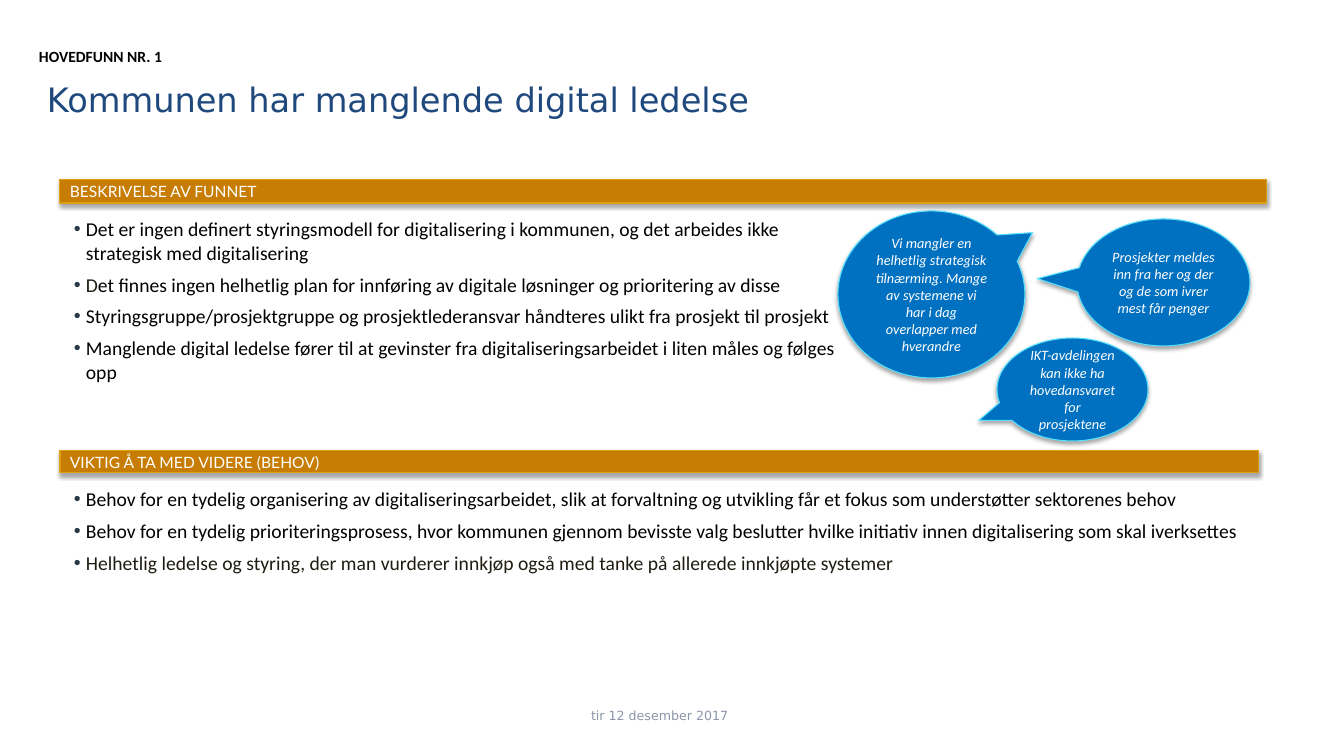
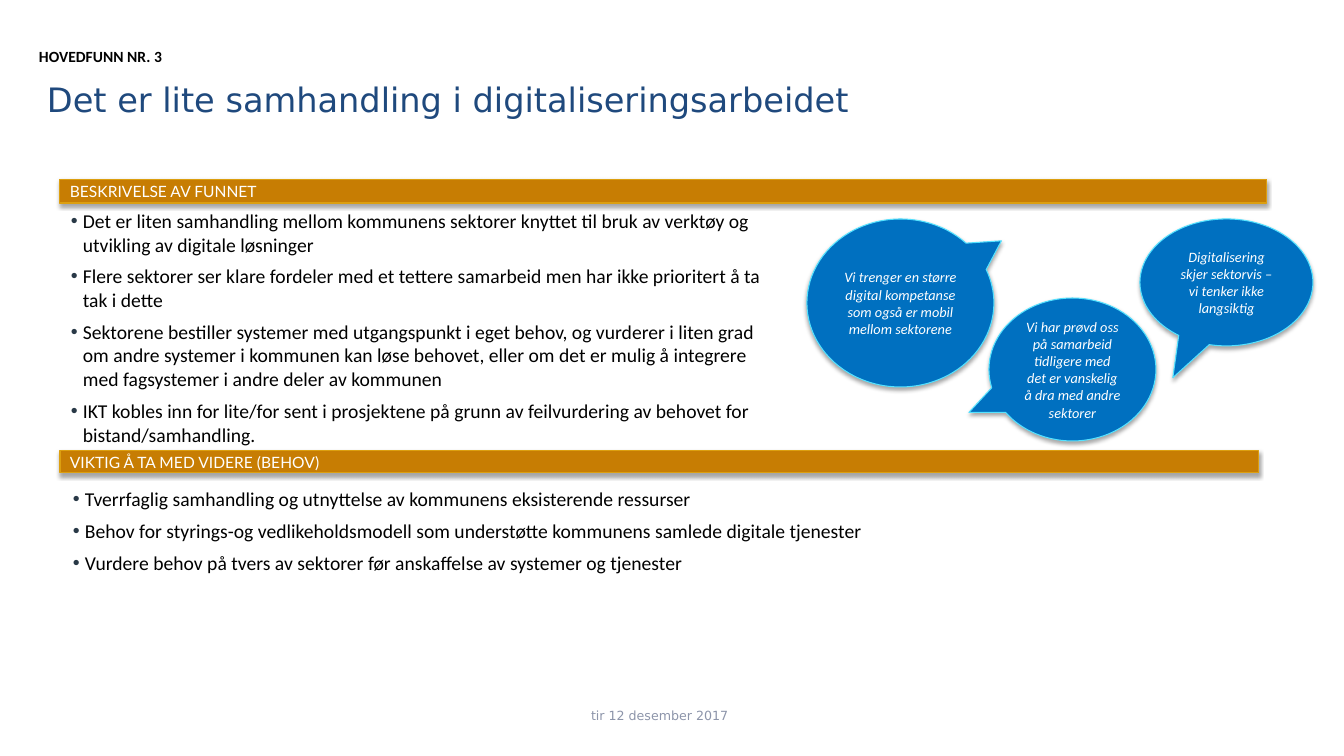
from lxml import etree
from pptx import Presentation
from pptx.dml.color import RGBColor
from pptx.enum.shapes import MSO_SHAPE
from pptx.enum.text import MSO_ANCHOR, PP_ALIGN
from pptx.oxml import parse_xml
from pptx.oxml.ns import qn
from pptx.util import Pt

RECT = MSO_SHAPE.RECTANGLE
CALLOUT = MSO_SHAPE.OVAL_CALLOUT
TOP, MIDDLE = MSO_ANCHOR.TOP, MSO_ANCHOR.MIDDLE
LEFT, CENTER = PP_ALIGN.LEFT, PP_ALIGN.CENTER
PX = 914400 / 100.8

C = {
    "title": "1F497D",
    "footer": "8D95AA",
    "band": "C77D03",
    "band_line": "DC9F10",
    "callout": "0070C0",
    "callout_line": "55E2FF",
    "bullet": "293947",
    "black": "000000",
    "ink": "1E1C11",
    "white": "FFFFFF",
}

SHADOW = (
    '<a:effectLst xmlns:a="http://schemas.openxmlformats.org/drawingml/2006/main">'
    '<a:outerShdw blurRad="40000" dist="23000" dir="5400000" rotWithShape="0">'
    '<a:srgbClr val="000000"><a:alpha val="35000"/></a:srgbClr>'
    "</a:outerShdw></a:effectLst>"
)

BANDS = [
    ((60, 179, 1207, 24), "BESKRIVELSE AV FUNNET"),
    ((60, 451, 1199, 22), "VIKTIG Å TA MED VIDERE (BEHOV)"),
]

SLIDES = [
    {
        "label": "HOVEDFUNN NR. 1",
        "title": "Kommunen har manglende digital ledelse",
        "lists": [
            ((64, 212, 788, 178), [
                [("Det er ingen definert styringsmodell for digitalisering i kommunen, og det arbeides ikke strategisk med digitalisering", "black")],
                [("D", "ink"), ("et finnes ingen helhetlig plan for innføring av digitale løsninger og prioritering av disse", "black")],
                [("Styringsgruppe/prosjektgruppe og prosjektlederansvar håndteres ulikt fra prosjekt til prosjekt", "black")],
                [("Manglende digital ledelse fører til at gevinster fra digitaliseringsarbeidet i liten måles og følges opp", "black")],
            ]),
            ((64, 482, 1185, 122), [
                [("Behov for en tydelig organisering av digitaliseringsarbeidet, slik at forvaltning og utvikling får et fokus som understøtter sektorenes behov", "black")],
                [("Behov for en tydelig prioriteringsprosess, hvor kommunen gjennom bevisste valg beslutter hvilke initiativ innen digitalisering som skal iverksettes", "black")],
                [("Helhetlig ledelse og styring, der man vurderer innkjøp også med tanke på allerede innkjøpte systemer", "ink")],
            ]),
        ],
        "callouts": [
            ((1077, 219, 173, 127), (-0.73, -0.03), "Prosjekter meldes inn fra her og der og de som ivrer mest får penger"),
            ((838, 211, 187, 167), (0.54, -0.37), "Vi mangler en helhetlig strategisk tilnærming. Mange av systemene vi har i dag overlapper med hverandre"),
            ((997, 338, 151, 103), (-0.62, 0.3), "IKT-avdelingen kan ikke ha hovedansvaret for prosjektene"),
        ],
    },
    {
        "label": "HOVEDFUNN NR. 3",
        "title": "Det er lite samhandling i digitaliseringsarbeidet",
        "lists": [
            ((61, 204, 729, 249), [
                [("Det er liten samhandling mellom kommunens sektorer knyttet til bruk av verktøy og utvikling av digitale løsninger", "black")],
                [("Flere sektorer ser klare fordeler med et tettere samarbeid men har ikke prioritert å ta tak i dette", "black")],
                [("Sektorene bestiller systemer med utgangspunkt i eget behov, og vurderer i liten grad om andre systemer i kommunen kan løse behovet, eller om det er mulig å integrere med fagsystemer i andre deler av kommunen", "black")],
                [("IKT kobles inn for lite/for sent i prosjektene på grunn av feilvurdering av behovet for bistand/samhandling.", "black")],
            ]),
            ((63, 482, 1185, 99), [
                [("Tverrfaglig samhandling og utnyttelse av kommunens eksisterende ressurser", "black")],
                [("Behov for styrings-og vedlikeholdsmodell som understøtte kommunens samlede digitale tjenester", "black")],
                [("Vurdere behov på tvers av sektorer før anskaffelse av systemer og tjenester", "black")],
            ]),
        ],
        "callouts": [
            ((1140, 219, 173, 127), (-0.31, 0.75), "Digitalisering skjer sektorvis – vi tenker ikke langsiktig"),
            ((807, 219, 187, 168), (0.54, -0.37), "Vi trenger en større digital kompetanse som også er mobil mellom sektorene"),
            ((989, 298, 167, 143), (-0.62, 0.3), "Vi har prøvd oss på samarbeid tidligere med det er vanskelig å dra med andre sektorer"),
        ],
    },
]


def write(sp, paragraphs, font, size, align=LEFT, anchor=MIDDLE, bold=False, italic=False, bullets=False):
    tf = sp.text_frame
    tf.word_wrap = True
    tf.vertical_anchor = anchor
    for i, runs in enumerate(paragraphs):
        p = tf.add_paragraph() if i else tf.paragraphs[0]
        p.alignment = align
        if bullets:
            if i:
                p.space_before = Pt(6)
            pPr = p._p.get_or_add_pPr()
            pPr.set("marL", str(round(12 * PX)))
            pPr.set("indent", str(round(-12 * PX)))
            color = etree.SubElement(pPr, qn("a:buClr"))
            etree.SubElement(color, qn("a:srgbClr"), val=C["bullet"])
            etree.SubElement(pPr, qn("a:buFont"), typeface="Arial")
            etree.SubElement(pPr, qn("a:buChar"), char="•")
        for text, name in runs:
            r = p.add_run()
            r.text = text
            r.font.name = font
            r.font.size = Pt(size)
            r.font.bold = bold
            r.font.italic = italic
            r.font.color.rgb = RGBColor.from_string(C[name])


def add_box(s, box, kind=None, style=None):
    place = [round(v * PX) for v in box]
    if kind is None:
        return s.shapes.add_textbox(*place)
    sp = s.shapes.add_shape(kind, *place)
    sp.fill.solid()
    sp.fill.fore_color.rgb = RGBColor.from_string(C[style])
    sp.line.color.rgb = RGBColor.from_string(C[style + "_line"])
    sp.line.width = Pt(0.75)
    sp._element.spPr.append(parse_xml(SHADOW))
    return sp


prs = Presentation()
prs.slide_width = round(1344 * PX)
prs.slide_height = round(756 * PX)

for slide in SLIDES:
    s = prs.slides.add_slide(prs.slide_layouts[6])
    write(add_box(s, (37, 36, 1017, 126)), [[(slide["title"], "title")]], "DejaVu Sans", 24)
    write(add_box(s, (503, 696, 313, 40)), [[("tir 12 desember 2017", "footer")]], "DejaVu Sans", 9, CENTER)
    write(add_box(s, (29, 42, 183, 29)), [[(slide["label"], "black")]], "Calibri", 11.1, anchor=TOP, bold=True)
    for box, text in BANDS:
        write(add_box(s, box, RECT, "band"), [[(text, "white")]], "Lato", 11.1)
    for box, paragraphs in slide["lists"]:
        write(add_box(s, box), paragraphs, "Calibri", 14, anchor=TOP, bullets=True)
    for box, tip, text in slide["callouts"]:
        sp = add_box(s, box, CALLOUT, "callout")
        sp.adjustments[0], sp.adjustments[1] = tip
        write(sp, [[(text, "white")]], "Calibri", 10.2, CENTER, italic=True)

prs.save("out.pptx")
